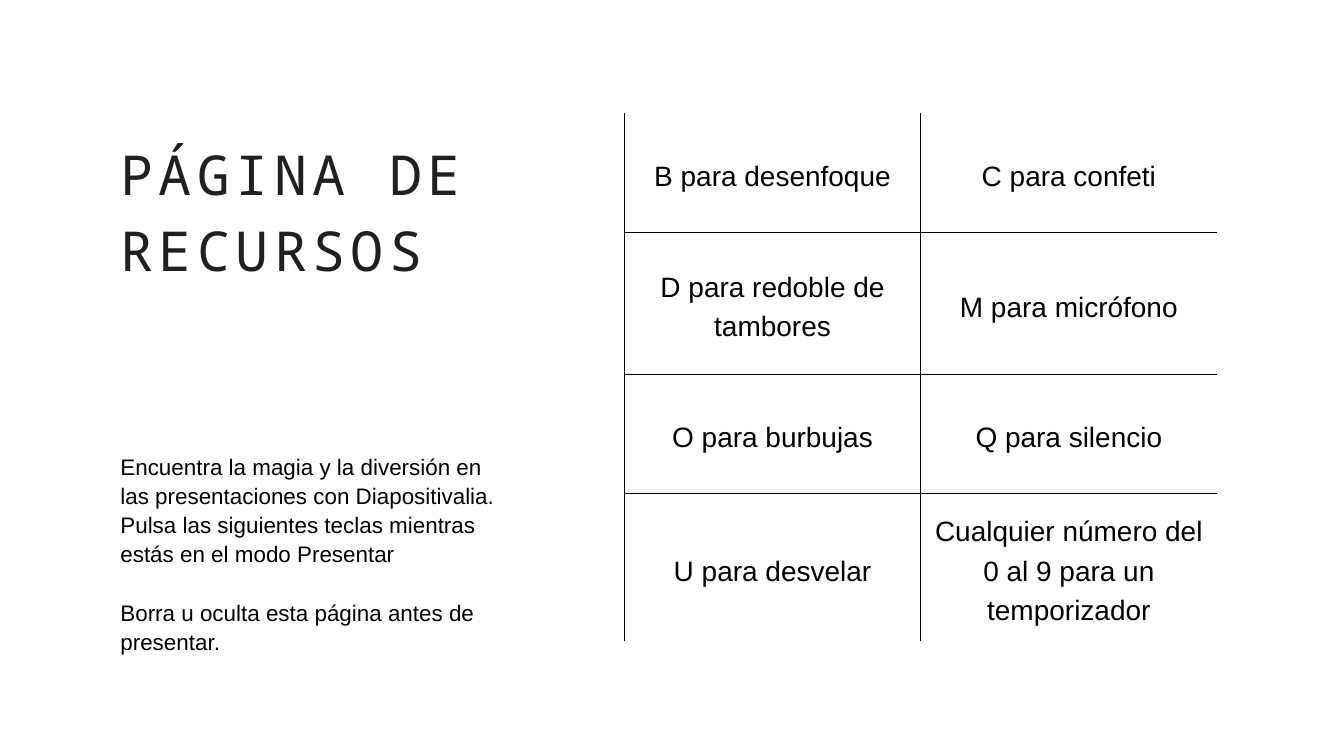
from lxml import etree
from pptx import Presentation
from pptx.dml.color import RGBColor
from pptx.enum.text import MSO_ANCHOR, PP_ALIGN
from pptx.oxml.ns import qn
from pptx.util import Pt

CENTER = PP_ALIGN.CENTER
MIDDLE = MSO_ANCHOR.MIDDLE
COLORS = {"text": "000000", "title": "231F20", "rule": "000000", "paper": "FFFFFF"}
MARGINS = ("margin_left", "margin_top", "margin_right", "margin_bottom")

TITLE_STYLE = {"name": "Noto Sans Mono", "size": Pt(59), "color": "title"}
BODY_STYLE = {"name": "Arial", "size": Pt(24), "color": "text"}
KEY_STYLE = {"name": "Arial", "size": Pt(30), "color": "text"}

TITLE = "PÁGINA DE RECURSOS"
INSTRUCTIONS = [
    "Encuentra la magia y la diversión en las presentaciones con Diapositivalia. "
    "Pulsa las siguientes teclas mientras estás en el modo Presentar",
    "Borra u oculta esta página antes de presentar.",
]
SHORTCUTS = [
    ("B para desenfoque", "C para confeti"),
    ("D para redoble de tambores", "M para micrófono"),
    ("O para burbujas", "Q para silencio"),
    ("U para desvelar", "Cualquier número del 0 al 9 para un temporizador"),
]
ROW_HEIGHTS = (127.4, 151.9, 127.4, 159.1)


def write(paragraph, text, style, leading):
    run = paragraph.add_run()
    run.text = text
    paragraph.line_spacing = Pt(leading)
    for key, value in style.items():
        if key == "color":
            run.font.color.rgb = RGBColor.from_string(COLORS[value])
        else:
            setattr(run.font, key, value)
    return run


def set_margins(target, points):
    for margin in MARGINS:
        setattr(target, margin, Pt(points))


def add_text_frame(slide, box):
    frame = slide.shapes.add_textbox(*map(Pt, box)).text_frame
    frame.word_wrap = True
    set_margins(frame, 0)
    return frame


def add_title(slide, box):
    frame = add_text_frame(slide, box)
    run = write(frame.paragraphs[0], TITLE, TITLE_STYLE, 81.3)
    run.font._element.set("spc", "580")


def add_instructions(slide, box):
    leading = 31.2
    frame = add_text_frame(slide, box)
    for index, text in enumerate(INSTRUCTIONS):
        paragraph = frame.paragraphs[0] if index == 0 else frame.add_paragraph()
        if index:
            paragraph.space_before = Pt(leading)
        write(paragraph, text, BODY_STYLE, leading)


def set_borders(cell, sides):
    properties = cell._tc.get_or_add_tcPr()
    for index, (side, color) in enumerate(sides.items()):
        line = etree.Element(qn(f"a:ln{side}"), w=str(Pt(0.75)))
        fill = etree.SubElement(line, qn("a:solidFill"))
        etree.SubElement(fill, qn("a:srgbClr"), val=COLORS[color])
        properties.insert(index, line)


def add_shortcuts(slide, box):
    """Key table, ruled in black inside and on the left, open on the other sides."""
    last_row, last_column = len(SHORTCUTS) - 1, len(SHORTCUTS[0]) - 1
    table = slide.shapes.add_table(last_row + 1, last_column + 1, *map(Pt, box)).table
    table.first_row = table.horz_banding = False
    for column in table.columns:
        column.width = Pt(box[2] / (last_column + 1))
    for r, (labels, height) in enumerate(zip(SHORTCUTS, ROW_HEIGHTS)):
        table.rows[r].height = Pt(height)
        for c, label in enumerate(labels):
            cell = table.cell(r, c)
            cell.vertical_anchor = MIDDLE
            set_margins(cell, 15)
            cell.fill.background()
            set_borders(cell, {
                "L": "rule",
                "R": "paper" if c == last_column else "rule",
                "T": "paper" if r == 0 else "rule",
                "B": "paper" if r == last_row else "rule",
            })
            paragraph = cell.text_frame.paragraphs[0]
            paragraph.alignment = CENTER
            write(paragraph, label, KEY_STYLE, 42)


def main():
    presentation = Presentation()
    presentation.slide_width, presentation.slide_height = Pt(1440), Pt(810)
    slide = presentation.slides.add_slide(presentation.slide_layouts[6])
    slide.background.fill.solid()
    slide.background.fill.fore_color.rgb = RGBColor.from_string(COLORS["paper"])
    add_shortcuts(slide, (669, 121.7, 635, sum(ROW_HEIGHTS)))
    add_title(slide, (129, 139.7, 398, 166.3))
    add_instructions(slide, (129, 483, 412.6, 245.5))
    presentation.save("out.pptx")


if __name__ == "__main__":
    main()
